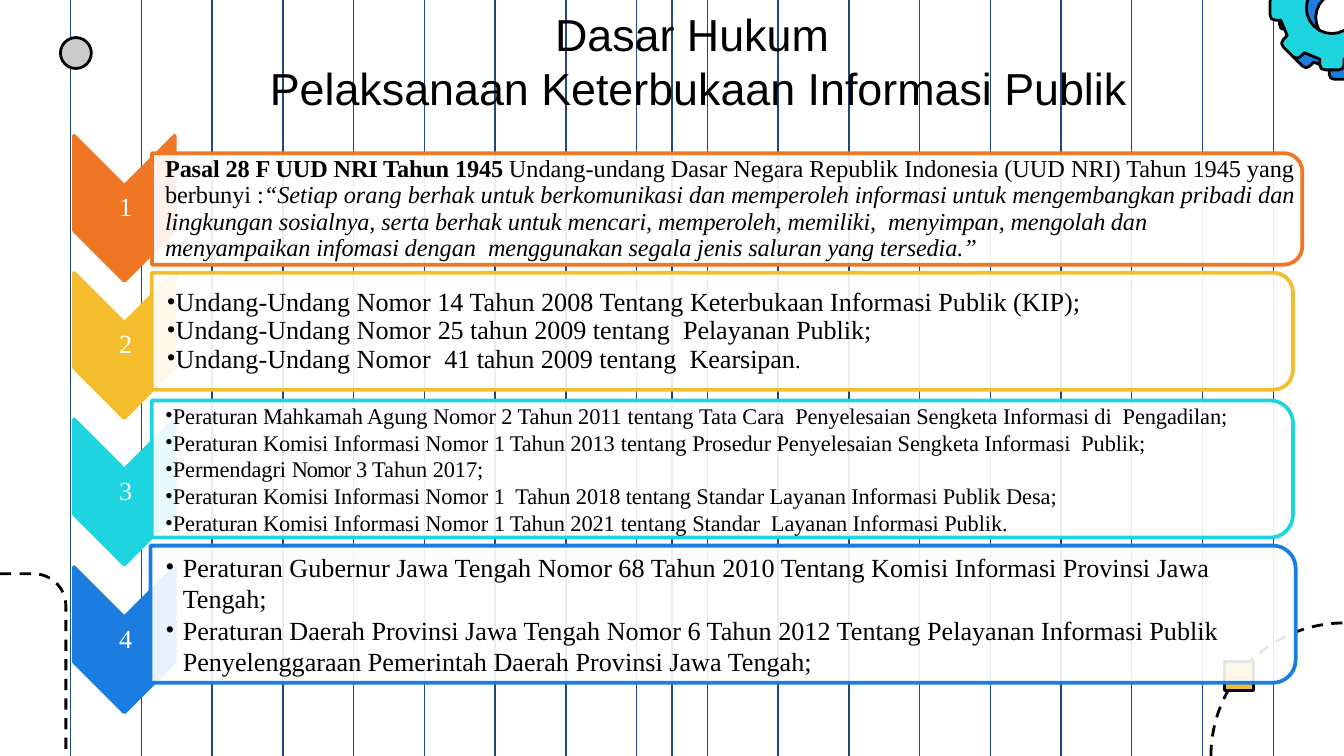
from math import cos, pi, sin

from lxml.etree import SubElement
from pptx import Presentation
from pptx.dml.color import RGBColor
from pptx.enum.dml import MSO_LINE
from pptx.enum.shapes import MSO_CONNECTOR, MSO_SHAPE
from pptx.enum.text import MSO_ANCHOR, MSO_AUTO_SIZE, PP_ALIGN
from pptx.oxml.ns import qn
from pptx.util import Inches, Pt

THEME = {
    "title_font": "Arial", "body_font": "Times New Roman",
    "title_size": 24, "number_size": 14,
    "ink": "000000", "white": "FFFFFF", "grid": "1F497D", "dot": "CBCBCB",
    "orange": "F07624", "yellow": "F4BD2D", "cyan": "1ED4DE", "blue": "1C7DE1",
}
WIDTH = 10
HEIGHT = WIDTH * 9 / 16
COLUMNS = 19
TITLE = ["Dasar Hukum ", "Pelaksanaan Keterbukaan Informasi Publik"]

# Run styles; spc is the letter spacing in hundredths of a point
PLAIN, TIGHT, TIGHTER = {}, {"spc": -5}, {"spc": -50}
BOLD, BOLD_TIGHT = {"bold": True}, {"bold": True, "spc": -5}
ITALIC, ITALIC_TIGHT = {"italic": True}, {"italic": True, "spc": -5}

# bar: left, top, width, height; each paragraph is a list of (text, style)
CARDS = [
    {"color": "orange", "chevron_top": 1.01, "bar": (1.13, 1.14, 8.56, 0.83),
     "size": 13, "inset": 0.1, "spacing": 0.9, "bullet": False, "indent": 0,
     "paragraphs": [[
         ("Pasal 28 ", BOLD_TIGHT), ("F ", BOLD), ("UUD NRI Tahun 1945 ", BOLD_TIGHT),
         ("Undang-undang Dasar Negara Republik Indonesia (UUD NRI) Tahun 1945 yang berbunyi :", PLAIN),
         ("“Setiap orang berhak untuk berkomunikasi dan ", ITALIC),
         ("memperoleh informasi ", ITALIC_TIGHT), ("untuk ", ITALIC),
         ("mengembangkan ", ITALIC_TIGHT), ("pribadi dan ", ITALIC),
         ("lingkungan sosialnya, serta ", ITALIC_TIGHT), ("berhak untuk ", ITALIC),
         ("mencari, memperoleh, memiliki,  menyimpan, mengolah ", ITALIC_TIGHT),
         ("dan ", ITALIC), ("menyampaikan infomasi ", ITALIC_TIGHT), ("dengan  ", ITALIC),
         ("menggunakan segala jenis saluran yang tersedia.”", ITALIC_TIGHT)]]},
    {"color": "yellow", "chevron_top": 2.03, "bar": (1.13, 2.03, 8.49, 0.87),
     "size": 14, "inset": 0.11, "spacing": 0.9, "bullet": True, "indent": 0,
     "paragraphs": [
         [("Undang-Undang Nomor 14 Tahun 2008 Tentang Keterbukaan Informasi Publik (KIP);", PLAIN)],
         [("Undang-Undang Nomor ", PLAIN), ("25 tahun 2009 ", TIGHT),
          ("tentang  ", PLAIN), ("Pelayanan Publik;", TIGHT)],
         [("Undang-Undang Nomor  ", PLAIN), ("41 tahun 2009 ", TIGHT),
          ("tentang  ", PLAIN), ("Kearsipan", TIGHT), (".", {"size": Pt(12), "spc": -5})]]},
    {"color": "cyan", "chevron_top": 3.12, "bar": (1.13, 2.98, 8.49, 1.02),
     "size": 12, "inset": 0.1, "spacing": 1.0, "bullet": True, "indent": 0,
     "paragraphs": [
         [("Peraturan Mahkamah Agung Nomor 2 Tahun 2011 ", TIGHT), ("tentang ", PLAIN),
          ("Tata Cara  Penyelesaian Sengketa Informasi di  Pengadilan;", TIGHT)],
         [("Peraturan Komisi Informasi Nomor 1 Tahun 2013 ", TIGHT), ("tentang ", PLAIN),
          ("Prosedur Penyelesaian Sengketa Informasi  Publik;", TIGHT)],
         [("Permendagri ", TIGHT), ("Nomor ", TIGHTER), ("3 Tahun 2017;", TIGHT)],
         [("Peraturan Komisi Informasi Nomor 1  Tahun 2018 tentang Standar Layanan Informasi Publik Desa;", TIGHT)],
         [("Peraturan Komisi Informasi Nomor 1 Tahun 2021 ", TIGHT), ("tentang ", PLAIN),
          ("Standar  Layanan Informasi Publik.", TIGHT)]]},
    {"color": "blue", "chevron_top": 4.22, "bar": (1.12, 4.06, 8.52, 1.02),
     "size": 14, "inset": 0.11, "spacing": 1.0, "bullet": True, "indent": 0.13,
     "paragraphs": [
         [("Peraturan Gubernur Jawa Tengah Nomor 68 Tahun 2010 Tentang Komisi Informasi Provinsi Jawa Tengah;", PLAIN)],
         [("Peraturan Daerah Provinsi Jawa Tengah Nomor 6 Tahun 2012 Tentang Pelayanan Informasi Publik "
           "Penyelenggaraan Pemerintah Daerah Provinsi Jawa Tengah;", PLAIN)]]},
]


def rgb(name):
    return RGBColor.from_string(THEME[name])


def paint(shape, fill, line="ink", width=1.5, dash=None, alpha=None):
    shape.shadow.inherit = False
    if fill:
        shape.fill.solid()
        shape.fill.fore_color.rgb = rgb(fill)
        if alpha:
            color = shape.element.spPr.find(qn("a:solidFill"))[0]
            SubElement(color, qn("a:alpha"), val=str(alpha * 1000))
    else:
        shape.fill.background()
    shape.line.color.rgb = rgb(line)
    shape.line.width = Pt(width)
    if dash:
        shape.line.dash_style = dash


def arc(cx, cy, r, start, end, steps=24):
    """Points on a circle; angles in degrees, clockwise from the right."""
    angles = [(start + (end - start) * i / steps) * pi / 180 for i in range(steps + 1)]
    return [(cx + r * cos(a), cy + r * sin(a)) for a in angles]


def outline(s, contours, close):
    contours = [[(Inches(x), Inches(y)) for x, y in c] for c in contours]
    builder = s.shapes.build_freeform(*contours[0][0], scale=1.0)
    for i, points in enumerate(contours):
        if i:
            builder.move_to(*points[0])
        builder.add_line_segments(points[1:], close=close)
    return builder.convert_to_shape()


def gear(s, cx, cy, color):
    half_tooth = [(-0.09, -0.38), (-0.09, -0.42), (-0.08, -0.45), (-0.05, -0.46)]
    tooth = half_tooth + [(-x, y) for x, y in reversed(half_tooth)]
    rim = []
    for k in range(8):
        c, n = cos(k * pi / 4), sin(k * pi / 4)
        rim += [(cx + x * c - y * n, cy + x * n + y * c) for x, y in tooth]
    paint(outline(s, [rim, arc(cx, cy, 0.19, 360, 0)], True), color)


def turned_shape(s, kind, left, top, width, height):
    """Add a shape turned 90 degrees that covers the given box."""
    cx, cy = left + width / 2, top + height / 2
    shape = s.shapes.add_shape(kind, Inches(cx - height / 2), Inches(cy - width / 2),
                               Inches(height), Inches(width))
    shape.rotation = 90
    return shape


def add_run(p, text, font, size, color, style=PLAIN):
    r = p.add_run()
    r.text = text
    r.font.color.rgb = rgb(color)
    for name, value in {"name": font, "size": Pt(size), **style}.items():
        if name == "spc":
            r.font._element.set("spc", str(value))
        else:
            setattr(r.font, name, value)


def text_frame(s, left, top, width, height, inset):
    tf = s.shapes.add_textbox(*map(Inches, (left, top, width, height))).text_frame
    margins = {"margin_left": inset, "margin_right": 0.01, "margin_top": 0.01, "margin_bottom": 0.01}
    for name, value in margins.items():
        setattr(tf, name, Inches(value))
    tf.word_wrap, tf.vertical_anchor = True, MSO_ANCHOR.MIDDLE
    return tf


def paragraphs(tf, items):
    for i, item in enumerate(items):
        yield (tf.add_paragraph() if i else tf.paragraphs[0]), item


def background(s):
    for x in [WIDTH * i / COLUMNS for i in range(1, COLUMNS)] + [WIDTH / 2]:
        line = s.shapes.add_connector(MSO_CONNECTOR.STRAIGHT, Inches(x), 0, Inches(x), Inches(HEIGHT))
        line.line.color.rgb = rgb("grid")
        line.line.width = Pt(0.75)
        SubElement(line.element.spPr, qn("a:effectLst"))
    gear(s, 9.98, 0.13, "blue")
    gear(s, 9.91, 0.06, "cyan")
    right_curve = arc(WIDTH, HEIGHT, 0.99, 180, 270)
    left_curve = [(0, 4.27)] + arc(0.25, 4.51, 0.24, 270, 360) + [(0.49, HEIGHT)]
    for curve in (right_curve, left_curve):
        paint(outline(s, [curve], False), None, dash=MSO_LINE.DASH)
    for kind, left, top, size, fill in ((MSO_SHAPE.RECTANGLE, 9.11, 4.92, 0.22, "yellow"),
                                        (MSO_SHAPE.OVAL, 0.45, 0.28, 0.23, "dot")):
        paint(s.shapes.add_shape(kind, *map(Inches, (left, top, size, size))), fill)


def heading(s):
    title = s.shapes.title
    title.element.getparent().append(title.element)  # in front of the grid
    box = {"left": 1.58, "top": 0, "width": 7.23, "height": 0.91}
    for name, value in box.items():
        setattr(title, name, Inches(value))
    tf = title.text_frame
    tf.word_wrap, tf.auto_size, tf.vertical_anchor = True, MSO_AUTO_SIZE.NONE, MSO_ANCHOR.TOP
    for p, text in paragraphs(tf, TITLE):
        p.alignment, p.space_before = PP_ALIGN.CENTER, Pt(0)
        add_run(p, text, THEME["title_font"], THEME["title_size"], "ink")


def card(s, number, data):
    top, color = data["chevron_top"], data["color"]
    paint(turned_shape(s, MSO_SHAPE.CHEVRON, 0.55, top, 0.75, 1.08), color, color, 2)
    p = text_frame(s, 0.56, top + 0.38, 0.75, 0.32, 0.01).paragraphs[0]
    p.alignment, p.line_spacing = PP_ALIGN.CENTER, 0.9
    add_run(p, str(number), THEME["body_font"], THEME["number_size"], "white")

    left, top, width, height = data["bar"]
    bar = turned_shape(s, MSO_SHAPE.ROUND_2_SAME_RECTANGLE, left, top, width, height)
    paint(bar, "white", color, 2, alpha=90)
    tf = text_frame(s, left, top + 0.04, width - 0.04, height - 0.08, data["inset"])
    for p, runs in paragraphs(tf, data["paragraphs"]):
        p.line_spacing = data["spacing"]
        if data["bullet"]:
            pPr = p._p.get_or_add_pPr()
            pPr.set("marL", str(Inches(data["indent"])))
            pPr.set("indent", str(-Inches(data["indent"])))
            SubElement(pPr, qn("a:buFont"), typeface=THEME["body_font"])
            SubElement(pPr, qn("a:buChar"), char="•")
        for text, style in runs:
            add_run(p, text, THEME["body_font"], data["size"], "ink", style)


prs = Presentation()
prs.slide_width, prs.slide_height = Inches(WIDTH), Inches(HEIGHT)
s = prs.slides.add_slide(prs.slide_layouts[5])
background(s)
heading(s)
for number, data in enumerate(CARDS, 1):
    card(s, number, data)
prs.save("out.pptx")
